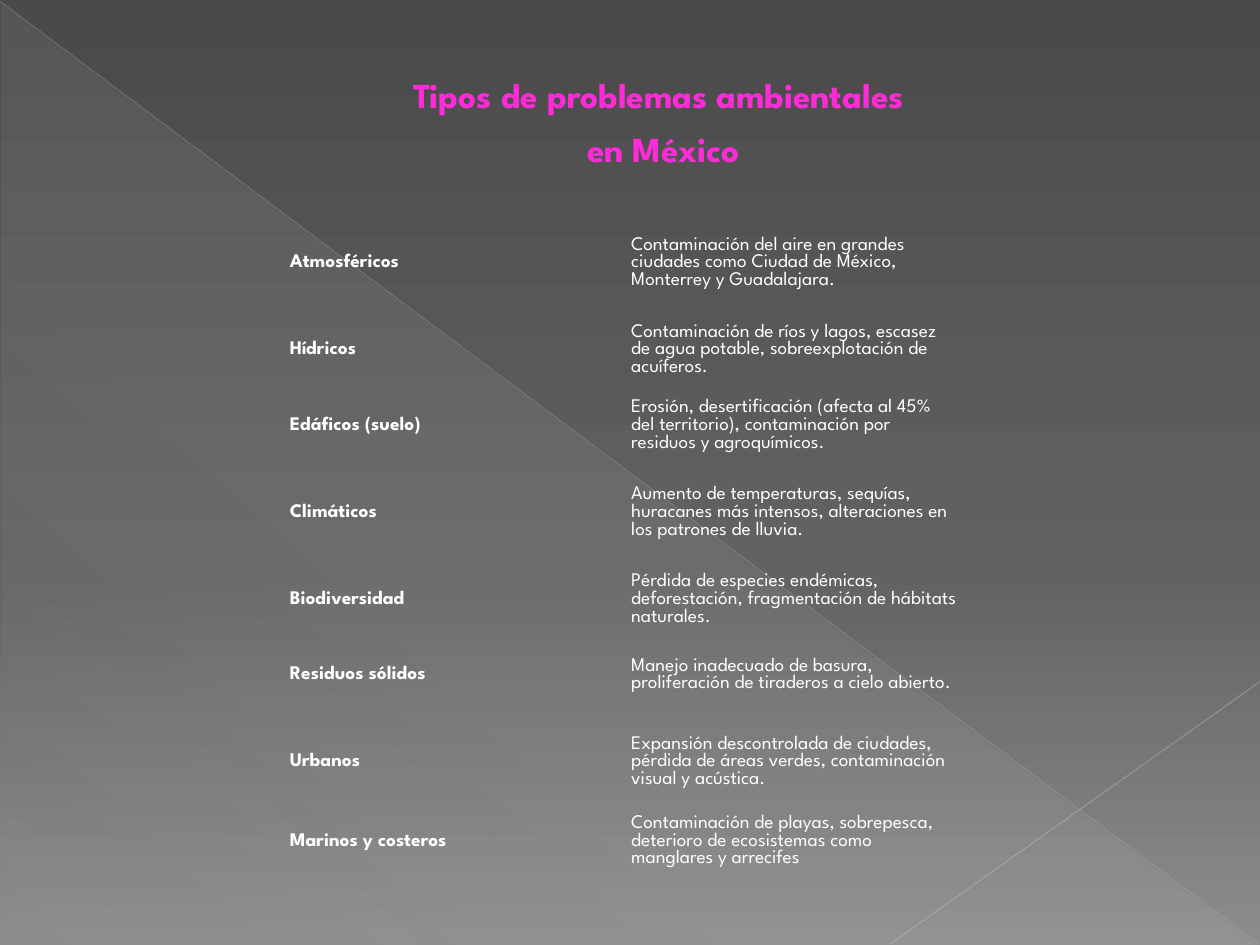
from lxml import etree
from pptx import Presentation
from pptx.dml.color import RGBColor
from pptx.enum import shapes, text
from pptx.oxml import parse_xml
from pptx.oxml.ns import nsdecls, qn
from pptx.util import Inches, Pt

# Content
TITLE = "Tipos de problemas ambientales \ven México"
# Row height, kind of problem, description
ROWS = [
    (0.78, "Atmosféricos", "Contaminación del aire en grandes ciudades como "
     "Ciudad de México, Monterrey y Guadalajara."),
    (0.6, "Hídricos", "Contaminación de ríos y lagos, escasez de agua potable, "
     "sobreexplotación de acuíferos."),
    (0.6, "Edáficos (suelo)", "Erosión, desertificación (afecta al 45% del "
     "territorio), contaminación por residuos y agroquímicos."),
    (0.78, "Climáticos", "Aumento de temperaturas, sequías, huracanes más "
     "intensos, alteraciones en los patrones de lluvia."),
    (0.6, "Biodiversidad", "Pérdida de especies endémicas, deforestación, "
     "fragmentación de hábitats naturales."),
    (0.6, "Residuos sólidos", "Manejo inadecuado de basura, proliferación de "
     "tiraderos a cielo abierto."),
    (0.78, "Urbanos", "Expansión descontrolada de ciudades, pérdida de áreas "
     "verdes, contaminación visual y acústica."),
    (0.24, "Marinos y costeros", "Contaminación de playas, sobrepesca, deterioro "
     "de ecosistemas como manglares y arrecifes"),
]
# Stops: position %, colour, opacity %
BACK = [(0, "4A4A4A", 100), (60, "626262", 100), (100, "8C8C8C", 100)]
VEIL = [(0, "D2D2D2", 10), (70, "D2D2D2", 8), (100, "D2D2D2", 1)]
# Start, end, colour, width, opacity %
LINES = [
    ((0, 0.01), (9.99, 7.49), "BFBFBF", 0.39, 35),
    ((10, 5.41), (7.07, 7.49), "C6C6C6", 0.47, 45),
]
FONT = "League Spartan"
PLAIN = "{2D5ABB26-0587-4C30-8999-92F81FD0307C}"  # no style, no grid


def color(code):
    return RGBColor.from_string(code)


def write(frame, words, size=11, tint="FFFFFF", bold=False, align=None, space=None):
    frame.text = words
    para = frame.paragraphs[0]
    para.alignment, para.line_spacing = align, space
    for run in para.runs:
        font = run.font
        font.name, font.size, font.bold = FONT, Pt(size), bold
        font.color.rgb = color(tint)
    return para


def blend(fill, props, stops, angle):
    """Give the properties element a gradient with any number of stops."""
    fill.gradient()
    marks = "".join(
        f'<a:gs pos="{pos * 1000}"><a:srgbClr val="{code}">'
        f'<a:alpha val="{alpha * 1000}"/></a:srgbClr></a:gs>'
        for pos, code, alpha in stops)
    old = props.find(qn("a:gradFill"))
    props.replace(old, parse_xml(
        f'<a:gradFill {nsdecls("a")} rotWithShape="1"><a:gsLst>{marks}</a:gsLst>'
        f'<a:lin ang="{angle * 60000}" scaled="0"/></a:gradFill>'))


def main():
    prs = Presentation()
    prs.slide_width, prs.slide_height = Inches(10), Inches(7.5)
    slide = prs.slides.add_slide(prs.slide_layouts[5])

    # Background
    ground = slide.background.fill
    ground.gradient()
    blend(ground, next(slide.element.iter(qn("p:bgPr"))), BACK, 90)

    # Pale triangle and crossing lines
    veil = slide.shapes.add_shape(shapes.MSO_SHAPE.RIGHT_TRIANGLE, Inches(0.01),
                                  Inches(0.02), Inches(9.98), Inches(7.48))
    veil.shadow.inherit = False
    veil.line.fill.background()
    blend(veil.fill, veil.element.spPr, VEIL, 133)
    for start, end, code, width, alpha in LINES:
        line = slide.shapes.add_connector(
            shapes.MSO_CONNECTOR.STRAIGHT, *map(Inches, start + end))
        line.line.width = Pt(width)
        line.line.color.rgb = color(code)
        props = line._element.spPr
        tone = next(props.iter(qn("a:srgbClr")))
        etree.SubElement(tone, qn("a:alpha"), val=str(alpha * 1000))
        etree.SubElement(props, qn("a:effectLst"))

    # Title, in front of the triangle
    title = slide.shapes.title
    title.left, title.top = Inches(0.5), Inches(0.29)
    title.width, title.height = Inches(9), Inches(1.25)
    frame = title.text_frame
    frame.vertical_anchor = text.MSO_ANCHOR.MIDDLE
    para = write(frame, TITLE, size=20, tint="FF2BD8", bold=True,
                 align=text.PP_ALIGN.CENTER, space=1.3)
    para._p.get_or_add_pPr().set("marL", str(Inches(0.53)))
    para._p.pPr.set("indent", "0")
    for run in para.runs:
        run.font._element.insert(0, parse_xml(
            f'<a:ln {nsdecls("a")} w="{Pt(0.5)}"><a:solidFill>'
            '<a:srgbClr val="B12761"/></a:solidFill></a:ln>'))
    slide.shapes._spTree.append(title._element)

    # Table of problems
    high = sum(row[0] for row in ROWS)
    table = slide.shapes.add_table(len(ROWS), 2, Inches(2.24), Inches(1.7),
                                   Inches(5.42), Inches(high)).table
    table.first_row = table.horz_banding = False
    table._tbl.tblPr.find(qn("a:tableStyleId")).text = PLAIN
    for r, (tall, *words) in enumerate(ROWS):
        table.rows[r].height = Inches(tall)
        for c, word in enumerate(words):
            cell = table.cell(r, c)
            cell.fill.background()
            cell.vertical_anchor = text.MSO_ANCHOR.MIDDLE
            cell.margin_left = cell.margin_right = Inches(0.06)
            cell.margin_top = cell.margin_bottom = Inches(0.03)
            write(cell.text_frame, word, bold=c == 0)

    prs.save("out.pptx")


if __name__ == "__main__":
    main()
